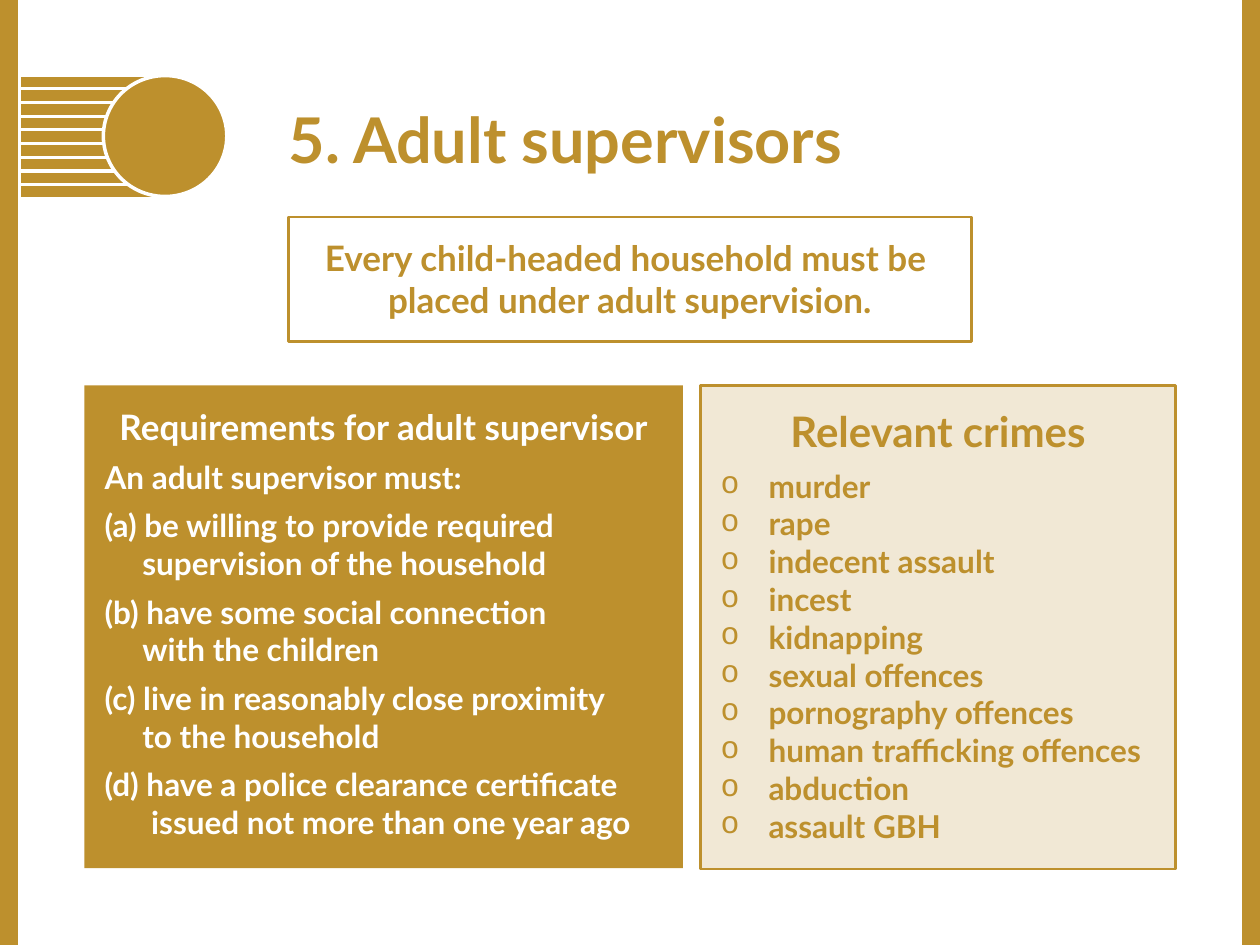
"""Build the slide on adult supervisors of child-headed households."""
from lxml.etree import SubElement
from pptx import Presentation
from pptx.dml.color import RGBColor
from pptx.enum.shapes import MSO_CONNECTOR as Connector, MSO_SHAPE as Shape
from pptx.enum.text import MSO_ANCHOR as Anchor, PP_ALIGN as Align
from pptx.oxml.ns import qn
from pptx.util import Inches, Pt

GOLD = RGBColor(0xBD, 0x90, 0x2D)
WHITE = RGBColor(0xFF, 0xFF, 0xFF)

REQUIREMENTS = [
    ("(a) be willing to provide required \vsupervision of the household", 0.3),
    ("(b) have some social connection \vwith the children", 0.3),
    ("(c) live in reasonably close proximity \vto the household", 0.3),
    ("(d) have a police clearance certificate \vissued not more than one year ago", 0.37),
]
CRIMES = [
    "murder", "rape", "indecent assault", "incest", "kidnapping",
    "sexual offences", "pornography offences", "human trafficking offences",
    "abduction", "assault GBH",
]


def write(frame, text, size=18, color=GOLD, align=Align.LEFT, after=0, hang=0, bullet=None):
    first = frame.paragraphs[0]
    paragraph = frame.add_paragraph() if first.runs else first
    paragraph.text = text
    paragraph.alignment = align
    paragraph.space_after = Pt(after)
    properties = paragraph._p.get_or_add_pPr()
    properties.set("marL", str(Inches(hang)))
    properties.set("indent", str(-Inches(hang)))
    if bullet:
        SubElement(properties, qn("a:buFont"), typeface="Courier New")
        SubElement(properties, qn("a:buChar"), char=bullet)
    for run in paragraph.runs:
        run.font.name = "Lato"
        run.font.size = Pt(size)
        run.font.bold = True
        run.font.color.rgb = color


class Page:
    def __init__(self, slide, accent=GOLD, inset=0.16):
        self.slide = slide
        self.accent = accent
        self.inset = inset

    def line(self, x1, y1, x2, y2, width):
        line = self.slide.shapes.add_connector(
            Connector.STRAIGHT, Inches(x1), Inches(y1), Inches(x2), Inches(y2))
        line.line.color.rgb = self.accent
        line.line.width = Pt(width)
        SubElement(line._element.spPr, qn("a:effectLst"))

    def shape(self, kind, box, fill, outline=None, width=1.25, opacity=None):
        shape = self.slide.shapes.add_shape(kind, *map(Inches, box))
        shape.shadow.inherit = False
        shape.fill.solid()
        shape.fill.fore_color.rgb = fill
        if opacity:
            color = shape._element.spPr.find(qn("a:solidFill"))[0]
            SubElement(color, qn("a:alpha"), val=str(opacity * 1000))
        if outline is None:
            shape.line.fill.background()
        else:
            shape.line.color.rgb = outline
            shape.line.width = Pt(width)
        return self.frame(shape, self.inset, Anchor.TOP)

    def text(self, box):
        return self.frame(self.slide.shapes.add_textbox(*map(Inches, box)), 0, Anchor.MIDDLE)

    def frame(self, shape, inset, anchor):
        frame = shape.text_frame
        frame.word_wrap = True
        frame.vertical_anchor = anchor
        frame.margin_left = frame.margin_right = Inches(inset)
        frame.margin_top = frame.margin_bottom = Inches(inset)
        return frame


def main():
    deck = Presentation()
    deck.slide_width, deck.slide_height = Inches(10), Inches(7.5)
    page = Page(deck.slides.add_slide(deck.slide_layouts[6]))

    for edge in (0.07, 9.93):
        page.line(edge, 0, edge, 7.5, 10)
    for stripe in range(9):
        y = 0.65 + stripe * (1.52 - 0.65) / 8
        page.line(0.17, y, 1.28, y, 6)
    page.shape(Shape.OVAL, (0.82, 0.6, 0.98, 0.96), GOLD, WHITE, width=2)

    write(page.text((2.29, 0.67, 7.04, 0.86)), "5. Adult supervisors", size=36)

    rule = page.shape(Shape.RECTANGLE, (2.29, 1.72, 5.42, 0.99), WHITE, GOLD)
    write(rule, "Every child-headed household must be \vplaced under adult supervision.",
          size=20, align=Align.CENTER)

    requirements = page.shape(Shape.RECTANGLE, (0.67, 3.06, 4.75, 3.83), GOLD)
    write(requirements, "Requirements for adult supervisor",
          size=20, color=WHITE, align=Align.CENTER, after=6)
    write(requirements, "An adult supervisor must:", color=WHITE, after=6)
    for requirement, hang in REQUIREMENTS:
        write(requirements, requirement, color=WHITE, after=6, hang=hang)

    crimes = page.shape(Shape.RECTANGLE, (5.56, 3.06, 3.77, 3.84), GOLD, GOLD, opacity=20)
    write(crimes, "Relevant crimes", size=24, align=Align.CENTER, after=6)
    for crime in CRIMES:
        write(crimes, crime, hang=0.38, bullet="o")

    deck.save("out.pptx")


if __name__ == "__main__":
    main()
